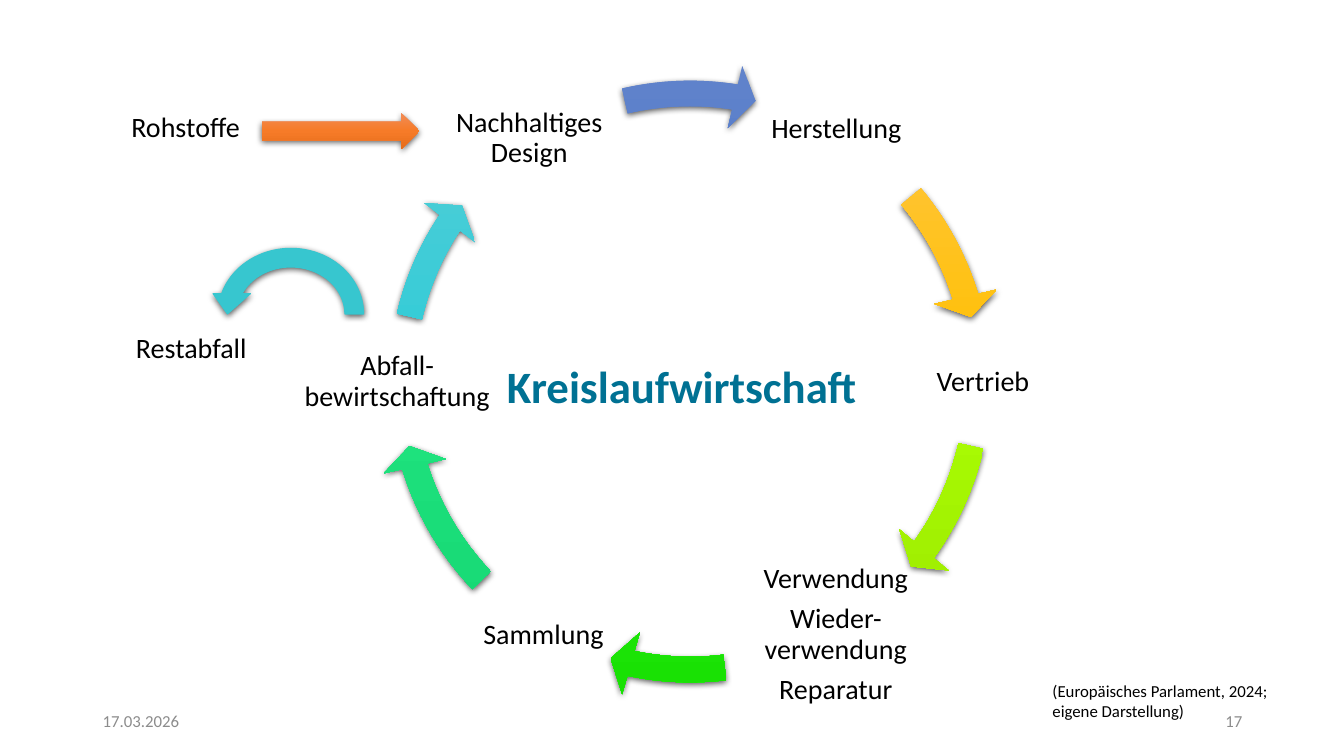
from pptx import Presentation
from pptx.dml.color import RGBColor
from pptx.enum.shapes import MSO_SHAPE as SHAPE
from pptx.enum.text import MSO_ANCHOR as ANCHOR, PP_ALIGN as ALIGN
from pptx.oxml import parse_xml
from pptx.oxml.ns import nsdecls
from pptx.util import Inches, Pt

FONT = "Calibri"
BLACK = RGBColor(0x00, 0x00, 0x00)
GREY = RGBColor(0x8C, 0x8C, 0x8C)
PETROL = RGBColor(0x00, 0x71, 0x93)
TURQUOISE = RGBColor(0x37, 0xC6, 0xCF)


def shades(*codes):
    return [RGBColor.from_string(code) for code in codes]


ORANGE_SHADES = shades("F18C57", "F67B28", "E56C19")
YELLOW_SHADES = shades("FFC64B", "FFC000", "E3AB00")
LIME_SHADES = shades("B1F74C", "ABFE03", "99E400")
GREEN_SHADES = shades("55EC4E", "26F112", "19E104")
MINT_SHADES = shades("53E18E", "20E47F", "13D471")
TURQUOISE_SHADES = shades("59CDD6", "2FCCD7", "21BDC8")
BLUE_SHADES = shades("6183CB", "3E70CA", "3062BB")

STAGES = [
    (["Herstellung"], 3.84, 0.02, 1.57),
    (["Vertrieb"], 5.43, 2.53, 1.3),
    (["Verwendung", "Wieder-verwendung", "Reparatur"], 3.52, 5.04, 2.2),
    (["Sammlung"], 1.07, 5.04, 1.3),
    (["Abfall-bewirtschaftung"], -0.76, 2.53, 2.06),
    (["Nachhaltiges Design"], 0.63, 0.11, 1.9),
]
ARCS = [
    (YELLOW_SHADES, 192.04, 205.73),
    (LIME_SHADES, 7.77, 21.46),
    (GREEN_SHADES, 49.86, 61.11),
    (MINT_SHADES, 81.83, 97.73),
    (TURQUOISE_SHADES, 115.83, 128.08),
    (BLUE_SHADES, 154.14, 167.37),
]


def add_text(slide, box, paragraphs, size=20, color=BLACK, bold=False,
             align=ALIGN.LEFT, anchor=ANCHOR.TOP):
    tf = slide.shapes.add_textbox(*map(Inches, box)).text_frame
    tf.word_wrap = True
    tf.vertical_anchor = anchor
    for i, text in enumerate(paragraphs):
        p = tf.paragraphs[0] if i == 0 else tf.add_paragraph()
        p.alignment = align
        r = p.add_run()
        r.text = text
        r.font.name, r.font.size, r.font.bold = FONT, Pt(size), bold
        r.font.color.rgb = color
    return tf


def add_shadow(sp):
    sp.shadow.inherit = False
    effects = sp._element.spPr.find("{*}effectLst")
    effects.append(parse_xml(
        f'<a:outerShdw {nsdecls("a")} blurRad="{Pt(4.5)}" dist="{Pt(1.5)}" '
        'dir="5400000" algn="ctr" rotWithShape="0"><a:srgbClr val="000000">'
        '<a:alpha val="63000"/></a:srgbClr></a:outerShdw>'))


def add_arrow(slide, kind, box, colors):
    sp = slide.shapes.add_shape(kind, *map(Inches, box))
    sp.line.fill.background()
    sp.fill.gradient()
    sp.fill.gradient_angle = 270
    stops = sp._element.spPr.find("{*}gradFill").find("{*}gsLst")
    for stop in list(stops):
        stops.remove(stop)
    for i, color in enumerate(colors):
        stops.append(parse_xml(
            f'<a:gs {nsdecls("a")} pos="{i * 50000}"><a:srgbClr val="{color}"/></a:gs>'))
    add_shadow(sp)
    return sp


def add_cycle(slide, x, y, diameter):
    for paragraphs, dx, dy, width in STAGES:
        tf = add_text(slide, (x + dx, y + dy, width, 1.3), paragraphs,
                      align=ALIGN.CENTER, anchor=ANCHOR.MIDDLE)
        tf.margin_left = tf.margin_right = Inches(0.03)
        tf.margin_top = tf.margin_bottom = Inches(0.03)
        for p in tf.paragraphs:
            p.line_spacing = 0.9
            p.space_after = Pt(7)
    for colors, start, end in ARCS:
        sp = add_arrow(slide, SHAPE.CIRCULAR_ARROW, (x, y, diameter, diameter), colors)
        for i, value in enumerate((0.04, 2.5, end, start, 0.05)):
            sp.adjustments[i] = value
    add_text(slide, (x + 1.26, y + 2.9, 3.89, 0.64), ["Kreislaufwirtschaft"],
             size=32, color=PETROL, bold=True)


def add_raw_materials(slide, x, y):
    add_text(slide, (x, y, 1.52, 0.44), ["Rohstoffe"], align=ALIGN.CENTER)
    add_arrow(slide, SHAPE.RIGHT_ARROW, (x + 1.52, y + 0.08, 1.56, 0.36), ORANGE_SHADES)


def add_residual_waste(slide, x, y):
    sp = slide.shapes.add_shape(
        SHAPE.CIRCULAR_ARROW, *map(Inches, (x + 0.82, y, 1.63, 1.49)))
    sp._element.spPr.xfrm.set("flipH", "1")
    sp.fill.solid()
    sp.fill.fore_color.rgb = TURQUOISE
    sp.line.color.rgb = TURQUOISE
    sp.line.width = Pt(0.75)
    add_shadow(sp)
    add_text(slide, (x, y + 0.86, 1.36, 0.44), ["Restabfall"])


def add_footer(slide, x, y):
    add_text(slide, (x + 9.42, y - 0.25, 2.4, 0.5),
             ["(Europäisches Parlament, 2024; eigene Darstellung)"], size=12)
    add_text(slide, (x, y, 3, 0.4), ["17.03.2026"], size=12, color=GREY,
             anchor=ANCHOR.MIDDLE)
    add_text(slide, (x + 8.5, y, 3, 0.4), ["17"], size=12, color=GREY,
             align=ALIGN.RIGHT, anchor=ANCHOR.MIDDLE)


def main():
    prs = Presentation()
    prs.slide_width, prs.slide_height = Inches(13.33), Inches(7.5)
    slide = prs.slides.add_slide(prs.slide_layouts[6])
    add_cycle(slide, 3.67, 0.61, 6.35)
    add_raw_materials(slide, 1.08, 1.04)
    add_residual_waste(slide, 1.25, 2.37)
    add_footer(slide, 0.92, 6.95)
    prs.save("out.pptx")


if __name__ == "__main__":
    main()
